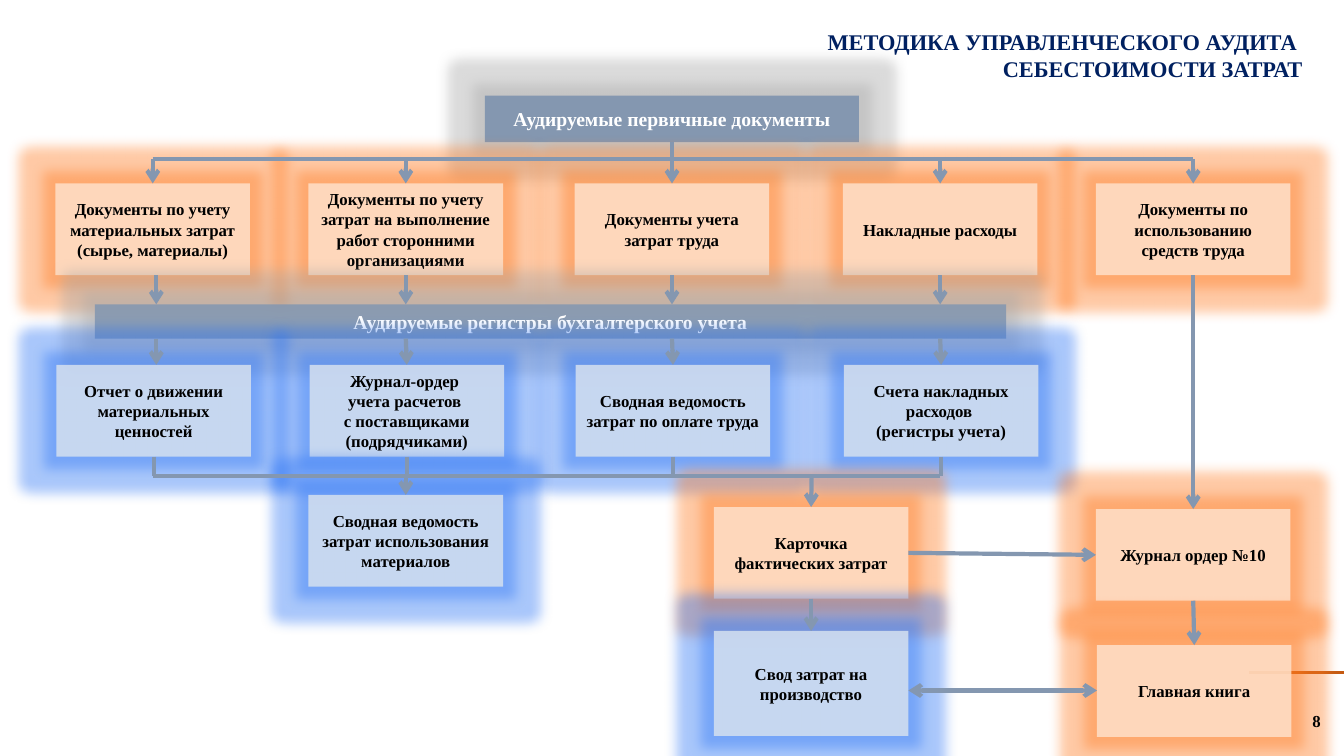
from lxml import etree
from pptx import Presentation
from pptx.dml.color import RGBColor
from pptx.enum.shapes import MSO_CONNECTOR as Connector, MSO_SHAPE as Shape
from pptx.enum.text import MSO_ANCHOR as Anchor, MSO_AUTO_SIZE as AutoSize, PP_ALIGN as Align
from pptx.oxml.ns import qn
from pptx.util import Inches, Pt

COLORS = {
    "navy": "002060", "steel": "8497B0", "peach": "FEDEC6", "sky": "D2DEEF",
    "rust": "C55A11", "white": "FFFFFF", "black": "000000",
    "gray glow": "A5A5A5", "orange glow": "FF7A1F", "blue glow": "2A73F5",
}
FONT = "Times New Roman"
TITLE = "МЕТОДИКА УПРАВЛЕНЧЕСКОГО АУДИТА \nСЕБЕСТОИМОСТИ ЗАТРАТ"
PAGE_NUMBER = "8"

STYLES = {
    "source": ("steel", 100, "gray glow", "white", 14),
    "register": ("steel", 88, "gray glow", "white", 14),
    "orange": ("peach", 88, "orange glow", "black", 12),
    "blue": ("sky", 88, "blue glow", "black", 12),
}
BOX_WIDTH, BOX_HEIGHT = 1.93, 0.91
COLUMNS = [0.55, 3.06, 5.7, 8.36, 10.87]
DOCUMENTS_TOP, LEDGERS_TOP = 1.82, 3.62
DOCUMENTS = [
    "Документы по учету материальных затрат (сырье, материалы)",
    "Документы по учету затрат на выполнение работ сторонними организациями",
    "Документы учета затрат труда",
    "Накладные расходы",
    "Документы по использованию средств труда",
]
LEDGERS = [
    "Отчет о движении материальных ценностей",
    "Журнал-ордер \vучета расчетов \vс поставщиками (подрядчиками)",
    "Сводная ведомость затрат по оплате труда",
    "Счета накладных расходов \n(регистры учета)",
]
BOXES = {
    "sources": ("Аудируемые первичные документы", "source", 4.81, 0.95, 3.71, 0.46),
    **{f"document {i}": (text, "orange", COLUMNS[i], DOCUMENTS_TOP, BOX_WIDTH, BOX_HEIGHT)
       for i, text in enumerate(DOCUMENTS)},
    "registers": ("Аудируемые регистры бухгалтерского учета", "register", 0.94, 3.02, 9.04, 0.34),
    **{f"ledger {i}": (text, "blue", COLUMNS[i] + 0.01, LEDGERS_TOP, BOX_WIDTH, BOX_HEIGHT)
       for i, text in enumerate(LEDGERS)},
    "materials": ("Сводная ведомость затрат использования материалов", "blue",
                  3.06, 4.91, BOX_WIDTH, BOX_HEIGHT),
    "cost card": ("Карточка фактических затрат", "orange", 7.08, 5.03, BOX_WIDTH, BOX_HEIGHT),
    "cost summary": ("Свод затрат на производство", "blue", 7.08, 6.26, BOX_WIDTH, 1.04),
    "journal": ("Журнал ордер №10", "orange", 10.87, 5.05, BOX_WIDTH, BOX_HEIGHT),
    "main book": ("Главная книга", "orange", 10.88, 6.4, BOX_WIDTH, BOX_HEIGHT),
}
TOP, LEFT, BOTTOM, RIGHT = range(4)
UPPER_RAIL, LOWER_RAIL = 1.58, 4.72
REGISTERS_TOP, REGISTERS_BOTTOM = 3.02, 3.36
CENTERS = [left + BOX_WIDTH / 2 for left in COLUMNS]
REGISTER_STOPS = [1.55] + CENTERS[1:4]

LINES = [
    (("sources", BOTTOM), (CENTERS[2], UPPER_RAIL)),
    ((CENTERS[0], UPPER_RAIL), (CENTERS[4], UPPER_RAIL)),
    ((CENTERS[0], LOWER_RAIL), (CENTERS[3], LOWER_RAIL)),
]
LINES += [((f"ledger {i}", BOTTOM), (CENTERS[i] + 0.01, LOWER_RAIL)) for i in range(4)]
ARROWS = [((x, UPPER_RAIL), (f"document {i}", TOP)) for i, x in enumerate(CENTERS)]
for i, x in enumerate(REGISTER_STOPS):
    ARROWS += [
        (("document %d" % i, BOTTOM) if i else (x, 2.73), (x, REGISTERS_TOP)),
        ((x, REGISTERS_BOTTOM), ("ledger %d" % i, TOP) if i else (x, LEDGERS_TOP)),
    ]
ARROWS += [
    ((CENTERS[1], LOWER_RAIL), ("materials", TOP)),
    ((8.05, LOWER_RAIL), ("cost card", TOP)),
    (("cost card", RIGHT), ("journal", LEFT)),
    (("document 4", BOTTOM), ("journal", TOP)),
    (("journal", BOTTOM), ("main book", TOP)),
    (("cost card", BOTTOM), ("cost summary", TOP)),
]
TWO_WAY = [((10.88, 6.85), (9.01, 6.85))]


def rgb(name):
    return RGBColor.from_string(COLORS[name])


def write(frame, text, size, color, align, anchor):
    frame.word_wrap = True
    frame.auto_size = AutoSize.NONE
    frame.vertical_anchor = anchor
    frame.margin_left = frame.margin_right = Inches(0.09)
    frame.margin_top = frame.margin_bottom = Inches(0.04)
    frame.text = text
    for para in frame.paragraphs:
        para.alignment = align
        para.font.name = FONT
        para.font.size = Pt(size)
        para.font.bold = True
        para.font.color.rgb = rgb(color)


def add_alpha(color_element, percent):
    etree.SubElement(color_element, qn("a:alpha"), val=str(percent * 1000))


def add_box(page, text, style, *place):
    fill, opacity, glow_color, ink, size = STYLES[style]
    box = page.shapes.add_shape(Shape.RECTANGLE, *map(Inches, place))
    box.fill.solid()
    box.fill.fore_color.rgb = rgb(fill)
    box.line.fill.background()
    box.shadow.inherit = False
    properties = box._element.spPr
    if opacity < 100:
        add_alpha(properties.find(qn("a:solidFill"))[0], opacity)
    glow = etree.SubElement(properties.find(qn("a:effectLst")), qn("a:glow"), rad=str(Pt(18)))
    add_alpha(etree.SubElement(glow, qn("a:srgbClr"), val=COLORS[glow_color]), 40)
    write(box.text_frame, text, size, ink, Align.CENTER, Anchor.MIDDLE)
    return box


def add_line(page, boxes, start, end, arrows=(), color="steel", width=3):
    points = [(0, 0) if isinstance(p[0], str) else tuple(map(Inches, p)) for p in (start, end)]
    for i, p in enumerate((start, end)):
        if isinstance(p[0], str):
            box, side = boxes[p[0]], p[1]
            across = {LEFT: 0, RIGHT: 1}.get(side, 0.5)
            down = {TOP: 0, BOTTOM: 1}.get(side, 0.5)
            points[i] = (int(box.left + box.width * across), int(box.top + box.height * down))
    line = page.shapes.add_connector(Connector.STRAIGHT, *points[0], *points[1])
    for p, connect in ((start, line.begin_connect), (end, line.end_connect)):
        if isinstance(p[0], str):
            connect(boxes[p[0]], p[1])
    line.line.color.rgb = rgb(color)
    line.line.width = Pt(width)
    for tag in arrows:
        etree.SubElement(line.line._get_or_add_ln(), qn(tag), type="arrow")
    etree.SubElement(line._element.spPr, qn("a:effectLst"))


def main():
    deck = Presentation()
    deck.slide_width, deck.slide_height = Inches(13.33), Inches(7.5)
    page = deck.slides.add_slide(deck.slide_layouts[5])

    title = page.shapes.title
    title.left, title.top, title.width, title.height = map(Inches, (3.75, 0.24, 9.26, 0.62))
    write(title.text_frame, TITLE, 16, "navy", Align.RIGHT, Anchor.TOP)

    add_line(page, {}, (12.39, 6.67), (13.33, 6.67), color="rust", width=2.25)
    boxes = {name: add_box(page, *content) for name, content in BOXES.items()}
    for group, arrows in ((LINES, ()), (ARROWS, ("a:tailEnd",)),
                          (TWO_WAY, ("a:headEnd", "a:tailEnd"))):
        for start, end in group:
            add_line(page, boxes, start, end, arrows)

    number = page.shapes.add_textbox(*map(Inches, (10.19, 6.95, 3, 0.4)))
    write(number.text_frame, PAGE_NUMBER, 12, "black", Align.RIGHT, Anchor.MIDDLE)
    deck.save("out.pptx")


if __name__ == "__main__":
    main()
